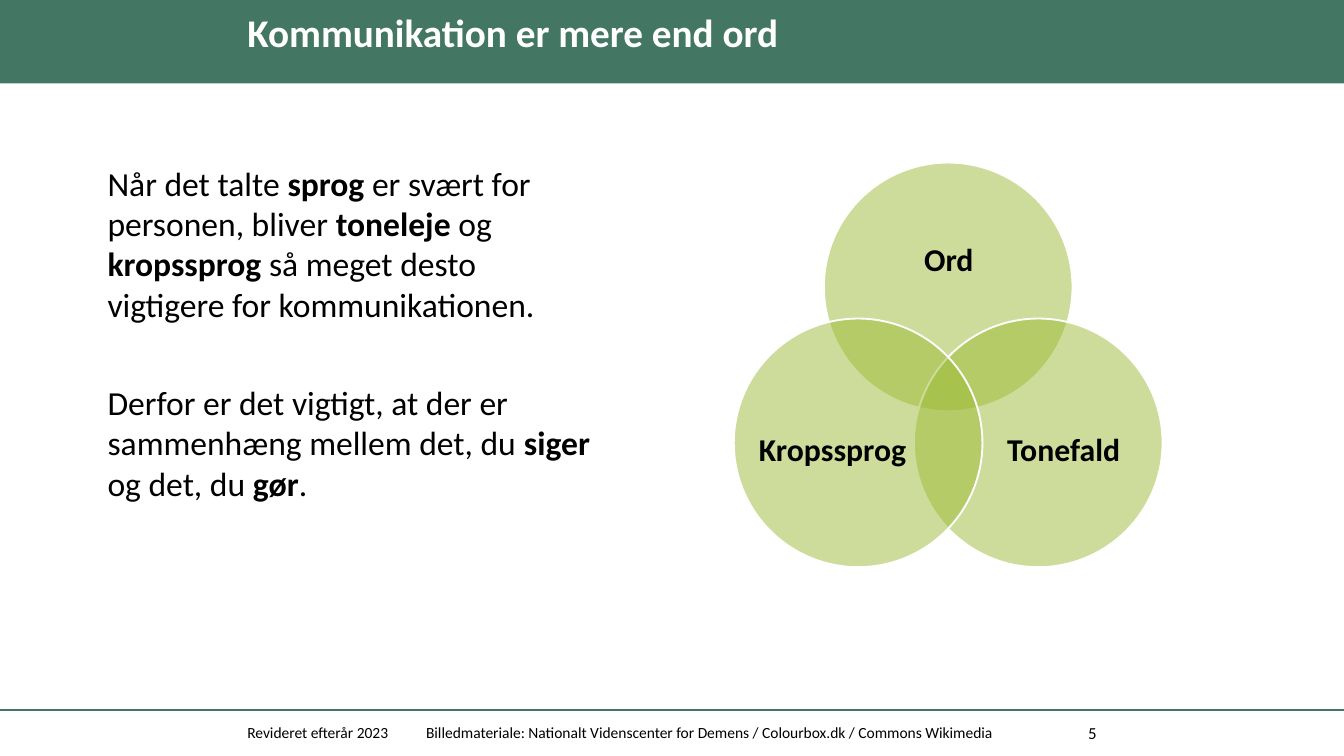
from lxml import etree
from pptx import Presentation
from pptx.dml.color import RGBColor
from pptx.enum.shapes import MSO_CONNECTOR as CONNECTOR, MSO_SHAPE as SHAPE
from pptx.enum.text import MSO_ANCHOR as ANCHOR, MSO_AUTO_SIZE as AUTO_SIZE, PP_ALIGN as ALIGN
from pptx.oxml.ns import qn
from pptx.util import Inches, Pt

COLORS = {"green": "437763", "lime": "9DBB36", "white": "FFFFFF", "black": "000000"}
INSETS = (0.07, 0.04, 0.07, 0.04)

BODY = [
    [("Når det talte ", False), ("sprog", True), (" er svært for personen, bliver ", False),
     ("toneleje", True), (" og ", False), ("kropssprog", True),
     (" så meget desto vigtigere for kommunikationen.", False)],
    [("Derfor er det vigtigt, at der er sammenhæng mellem det, du ", False), ("siger", True),
     (" og det, du ", False), ("gør", True), (".", False)],
]

FOOTER = [
    ("Revideret efterår 2023", 1.77, 1.26, 8.3, ALIGN.LEFT),
    ("Billedmateriale: Nationalt Videnscenter for Demens / Colourbox.dk / Commons Wikimedia",
     3.1, 4.72, 8.3, ALIGN.LEFT),
    ("5", 7.88, 0.35, 9, ALIGN.RIGHT),
]

CIRCLE_SIZE = 1.85
CIRCLES = [
    ("Ord", (6.13, 1.21), (6.38, 1.53, 1.36, 0.83)),
    ("Tonefald", (6.8, 2.37), (7.36, 2.85, 1.11, 1.02)),
    ("Kropssprog", (5.46, 2.37), (5.64, 2.85, 1.11, 1.02)),
]


class SlideBuilder:
    font_name = "Calibri"

    def __init__(self, presentation):
        self.slide = presentation.slides.add_slide(presentation.slide_layouts[1])
        self.shapes = self.slide.shapes

    def color(self, name):
        return RGBColor.from_string(COLORS[name])

    def style_font(self, font, size, color="black", bold=False):
        font.name = self.font_name
        font.size = Pt(size)
        font.bold = bold
        font.color.rgb = self.color(color)

    def place(self, shape, box):
        shape.left, shape.top, shape.width, shape.height = map(Inches, box)

    def style_frame(self, frame, insets, anchor, wrap=True):
        frame.auto_size = AUTO_SIZE.NONE
        frame.word_wrap = wrap
        frame.vertical_anchor = anchor
        (frame.margin_left, frame.margin_top,
         frame.margin_right, frame.margin_bottom) = map(Inches, insets)

    def band(self, box):
        shape = self.shapes.add_shape(SHAPE.RECTANGLE, *map(Inches, box))
        shape.shadow.inherit = False
        shape.fill.solid()
        shape.fill.fore_color.rgb = self.color("green")
        shape.line.fill.background()
        element = shape._element
        element.getparent().insert(2, element)

    def rule(self, top, width):
        line = self.shapes.add_connector(
            CONNECTOR.STRAIGHT, 0, Inches(top), Inches(width), Inches(top))
        line.line.color.rgb = self.color("green")
        line.line.width = Pt(1)
        etree.SubElement(line._element.spPr, qn("a:effectLst"))

    def title(self, text, box):
        shape = self.shapes.title
        self.place(shape, box)
        frame = shape.text_frame
        frame.text = text
        self.style_frame(frame, (0.07, 0, 0, 0), ANCHOR.MIDDLE)
        paragraph = frame.paragraphs[0]
        paragraph.alignment = ALIGN.LEFT
        paragraph.line_spacing = 0.9
        self.style_font(paragraph.runs[0].font, 21, "white", True)

    def body(self, paragraphs, box):
        shape = self.slide.placeholders[1]
        self.place(shape, box)
        frame = shape.text_frame
        self.style_frame(frame, INSETS, ANCHOR.TOP)
        for index, runs in enumerate(paragraphs):
            paragraph = frame.add_paragraph() if index else frame.paragraphs[0]
            properties = paragraph._p.get_or_add_pPr()
            properties.set("marL", "0")
            properties.set("indent", "0")
            etree.SubElement(properties, qn("a:buNone"))
            paragraph.space_before = Pt(31 if index else 0)
            for text, bold in runs:
                run = paragraph.add_run()
                run.text = text
                self.style_font(run.font, 18, bold=bold)

    def text(self, text, box, size, align, insets=INSETS, bold=False, wrap=True):
        shape = self.shapes.add_textbox(*map(Inches, box))
        frame = shape.text_frame
        frame.text = text
        self.style_frame(frame, insets, ANCHOR.MIDDLE, wrap)
        paragraph = frame.paragraphs[0]
        paragraph.alignment = align
        self.style_font(paragraph.runs[0].font, size, bold=bold)
        return paragraph

    def circle(self, left, top):
        shape = self.shapes.add_shape(
            SHAPE.OVAL, *map(Inches, (left, top, CIRCLE_SIZE, CIRCLE_SIZE)))
        shape.shadow.inherit = False
        shape.fill.solid()
        shape.fill.fore_color.rgb = self.color("lime")
        fill_color = shape._element.spPr.find(qn("a:solidFill"))[0]
        etree.SubElement(fill_color, qn("a:alpha"), val="50000")
        shape.line.color.rgb = self.color("white")
        shape.line.width = Pt(1)

    def circle_label(self, text, box):
        paragraph = self.text(text, box, 17, ALIGN.CENTER, (0, 0, 0, 0), True, False)
        paragraph.line_spacing = 0.9


def main():
    presentation = Presentation()
    presentation.slide_width = Inches(10)
    presentation.slide_height = presentation.slide_width * 9 // 16

    builder = SlideBuilder(presentation)
    builder.band((0, 0, 10, 0.62))
    builder.rule(5.28, 10)
    builder.title("Kommunikation er mere end ord", (1.77, 0.04, 5.94, 0.44))
    builder.body(BODY, (0.73, 1.17, 3.81, 3.57))
    for text, left, width, size, align in FOOTER:
        builder.text(text, (left, 5.3, width, 0.3), size, align)
    for label, corner, label_box in CIRCLES:
        builder.circle(*corner)
        builder.circle_label(label, label_box)

    presentation.save("out.pptx")


if __name__ == "__main__":
    main()
